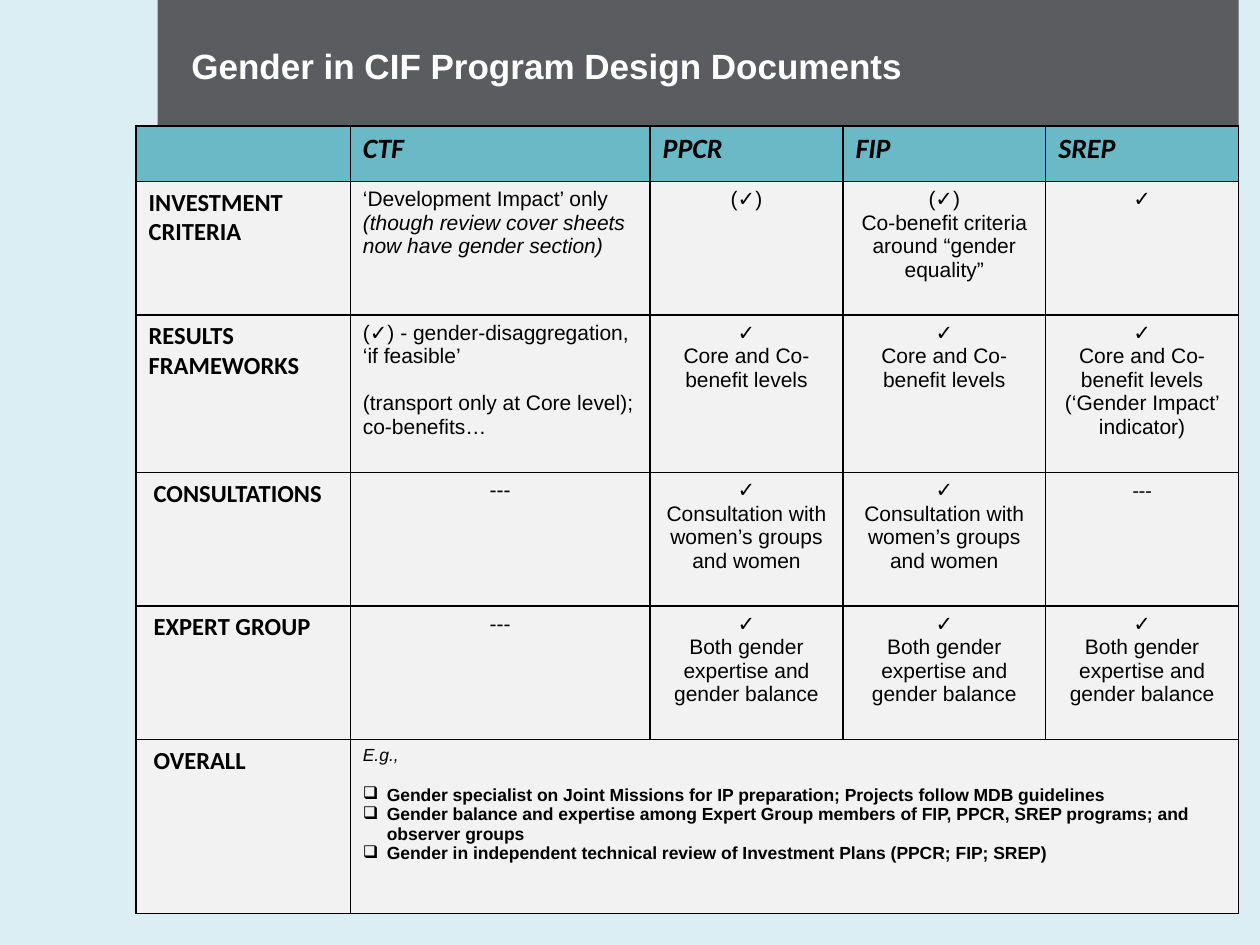
from dataclasses import dataclass

from lxml import etree
from pptx import Presentation
from pptx.dml.color import RGBColor
from pptx.enum import shapes, text
from pptx.oxml import ns
from pptx.util import Inches, Pt


@dataclass(frozen=True)
class Style:
    size: int
    font: str = "Arial"
    bold: bool = False
    italic: bool = False
    color: str = "000000"


@dataclass(frozen=True)
class Theme:
    background: str = "DBEEF4"
    banner: str = "5A5C60"
    header: str = "69B9C6"
    body: str = "F2F2F2"
    border: str = "000000"
    title: Style = Style(20, bold=True, color="FFFFFF")
    program: Style = Style(16, "Calibri", True, True)
    topic: Style = Style(14, "Calibri", True)
    entry: Style = Style(12)
    aside: Style = Style(12, italic=True)
    dash: Style = Style(12, "Calibri")
    example: Style = Style(10, italic=True)
    action: Style = Style(10, bold=True)


@dataclass(frozen=True)
class Line:
    words: str
    style: Style
    centered: bool = False
    bullet: bool = False
    before: float = 0


THEME = Theme()
CHECK = "✓"
COLUMN_WIDTHS = [1.7, 2.38, 1.53, 1.61, 1.53]
ROW_HEIGHTS = [0.44, 1.06, 1.25, 1.06, 1.06, 1.38]
PROGRAMS = ["CTF", "PPCR", "FIP", "SREP"]


def left(words, style=THEME.entry, before=0):
    return Line(words, style, before=before)


def centered(*entries, style=THEME.entry):
    return [Line(words, style, centered=True) for words in entries]


CONSULTED = centered(CHECK, "Consultation with women’s groups and women")
EXPERTS = centered(CHECK, "Both gender expertise and gender balance")
LEVELS = centered(CHECK, "Core and Co-benefit levels")
NONE = centered("---")
TOPICS = [
    ("INVESTMENT CRITERIA", 0.1, [
        [left("‘Development Impact’ only"),
         left("(though review cover sheets now have gender section)", THEME.aside)],
        centered("(✓)"),
        centered("(✓)", "Co-benefit criteria around “gender equality”"),
        centered(CHECK),
    ]),
    ("RESULTS FRAMEWORKS", 0.1, [
        [left("(✓) - gender-disaggregation, ‘if feasible’"),
         left("(transport only at Core level); co-benefits…", before=13.5)],
        LEVELS,
        LEVELS,
        centered(CHECK, "Core and Co-benefit levels (‘Gender Impact’ indicator)"),
    ]),
    ("CONSULTATIONS", 0.14,
     [NONE, CONSULTED, CONSULTED, centered("---", style=THEME.dash)]),
    ("EXPERT GROUP", 0.14, [NONE, EXPERTS, EXPERTS, EXPERTS]),
]
ACTIONS = [
    "Gender specialist on Joint Missions for IP preparation; Projects follow MDB guidelines",
    "Gender balance and expertise among Expert Group members of FIP, PPCR, SREP programs; "
    "and observer groups",
    "Gender in independent technical review of Investment Plans (PPCR; FIP; SREP)",
]


def paint(fill, color):
    fill.solid()
    fill.fore_color.rgb = RGBColor.from_string(color)


def add_bullet(paragraph):
    properties = paragraph._p.get_or_add_pPr()
    properties.set("marL", str(Inches(0.19)))
    properties.set("indent", str(Inches(-0.19)))
    etree.SubElement(properties, ns.qn("a:buChar")).set("char", "❑")


def write(frame, lines):
    frame.word_wrap = True
    for number, line in enumerate(lines):
        paragraph = frame.add_paragraph() if number else frame.paragraphs[0]
        if line.bullet:
            add_bullet(paragraph)
        if line.before:
            paragraph.space_before = Pt(line.before)
        align = text.PP_ALIGN
        paragraph.alignment = align.CENTER if line.centered else align.LEFT
        run = paragraph.add_run()
        run.text = line.words
        font, style = run.font, line.style
        font.size, font.name = Pt(style.size), style.font
        font.bold, font.italic = style.bold, style.italic
        font.color.rgb = RGBColor.from_string(style.color)


def outline(cell):
    properties = cell._tc.get_or_add_tcPr()
    for side in ("lnL", "lnR", "lnT", "lnB"):
        edge = etree.SubElement(properties, ns.qn(f"a:{side}"), w=str(Pt(1)))
        ink = etree.SubElement(edge, ns.qn("a:solidFill"))
        etree.SubElement(ink, ns.qn("a:srgbClr"), val=THEME.border)


def add_banner(slide):
    banner = slide.shapes.add_shape(
        shapes.MSO_SHAPE.RECTANGLE, Inches(1.25), 0, Inches(8.58), Inches(1.17))
    banner.shadow.inherit = False
    paint(banner.fill, THEME.banner)
    banner.line.fill.background()


def add_title(slide, words):
    title = slide.shapes.add_textbox(
        Inches(1.42), Inches(0.17), Inches(8.08), Inches(0.7)).text_frame
    title.vertical_anchor = text.MSO_ANCHOR.MIDDLE
    write(title, [Line(words, THEME.title)])


def add_grid(slide):
    grid = slide.shapes.add_table(
        len(ROW_HEIGHTS), len(COLUMN_WIDTHS), Inches(1.08), Inches(1),
        Inches(sum(COLUMN_WIDTHS)), Inches(sum(ROW_HEIGHTS))).table
    grid.horz_banding = False
    for column, width in zip(grid.columns, COLUMN_WIDTHS):
        column.width = Inches(width)
    for number, height in enumerate(ROW_HEIGHTS):
        grid.rows[number].height = Inches(height)
        for cell in grid.rows[number].cells:
            outline(cell)
            paint(cell.fill, THEME.body if number else THEME.header)
    return grid


def write_topic(cell, words, inset):
    cell.margin_left = Inches(inset)
    write(cell.text_frame, [left(words, THEME.topic)])


def fill_grid(grid):
    for column, program in enumerate(PROGRAMS, 1):
        write(grid.cell(0, column).text_frame, [left(program, THEME.program)])
    for row, (topic, inset, entries) in enumerate(TOPICS, 1):
        write_topic(grid.cell(row, 0), topic, inset)
        for column, lines in enumerate(entries, 1):
            write(grid.cell(row, column).text_frame, lines)
    last = len(ROW_HEIGHTS) - 1
    write_topic(grid.cell(last, 0), "OVERALL", 0.14)
    overall = grid.cell(last, 1)
    overall.merge(grid.cell(last, len(PROGRAMS)))
    actions = [Line(words, THEME.action, bullet=True, before=0 if number else 11.5)
               for number, words in enumerate(ACTIONS)]
    write(overall.text_frame, [left("E.g.,", THEME.example), *actions])


def main():
    deck = Presentation()
    deck.slide_width, deck.slide_height = Inches(10), Inches(7.5)
    slide = deck.slides.add_slide(deck.slide_layouts[6])
    paint(slide.background.fill, THEME.background)
    add_banner(slide)
    add_title(slide, "Gender in CIF Program Design Documents")
    fill_grid(add_grid(slide))
    deck.save("out.pptx")


if __name__ == "__main__":
    main()
